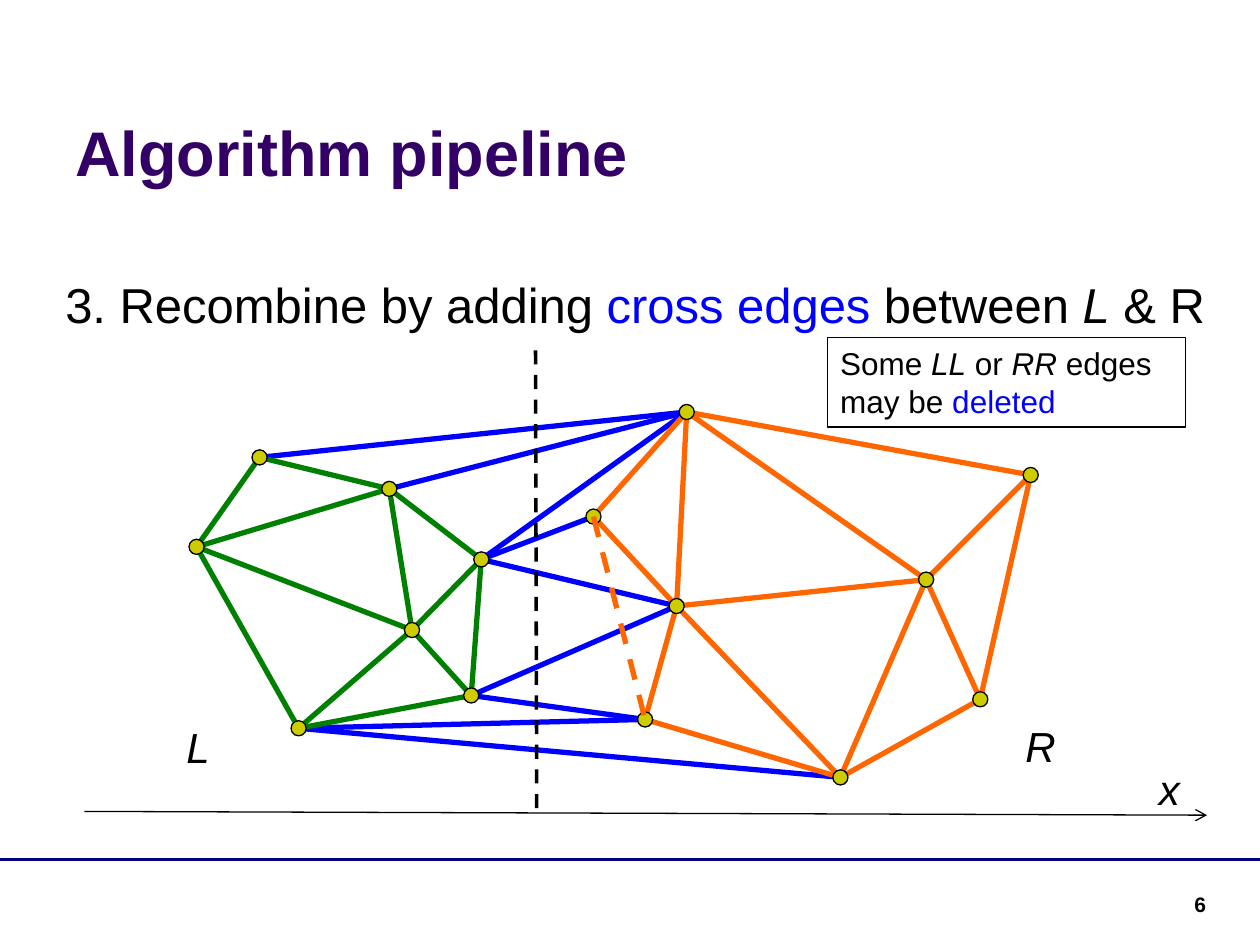
"""Builds the slide on merging two triangulations with cross edges."""
import lxml.etree
import pptx
import pptx.dml.color
import pptx.enum.dml
import pptx.enum.shapes
import pptx.enum.text
import pptx.oxml.ns
import pptx.util

Inches, Pt = pptx.util.Inches, pptx.util.Pt
RGB = pptx.dml.color.RGBColor
ALIGN = pptx.enum.text.PP_ALIGN
ANCHOR = pptx.enum.text.MSO_ANCHOR
SHAPE = pptx.enum.shapes.MSO_SHAPE
qn = pptx.oxml.ns.qn

BLACK, WHITE = RGB(0, 0, 0), RGB(255, 255, 255)
BLUE, ORANGE, GREEN = RGB(0, 0, 255), RGB(255, 102, 0), RGB(0, 128, 0)
NAVY, PURPLE, OLIVE = RGB(0, 0, 128), RGB(51, 0, 102), RGB(204, 204, 0)

DOT = 0.12
VERTICES = {
    "a": (1.56, 4.34), "b": (2.06, 3.63), "c": (3.27, 5.0), "d": (2.37, 5.78),
    "e": (3.09, 3.88), "f": (3.82, 4.44), "g": (3.74, 5.52),
    "h": (4.71, 4.1), "i": (6.67, 6.17), "j": (5.45, 3.27), "k": (7.78, 5.55),
    "l": (7.35, 4.6), "m": (5.12, 5.71), "n": (8.18, 3.77), "o": (5.37, 4.81),
}
EDGES = [
    (BLUE, "di dm ej fj fh fo bj gm go"),
    (ORANGE, "jo om jl lk nl lo oi li ho mi ki nk jn jh"),
    (GREEN, "ec ac dc gc cf ef be gf dg ab da ae"),
]
DELETED_EDGE = "hm"

STEP = [("3. Recombine by adding ", {}), ("cross edges", {"color": BLUE}),
        (" between ", {}), ("L", {"italic": True}), (" & R", {})]
NOTE = [("Some ", {}), ("LL", {"italic": True}), (" or ", {}), ("RR", {"italic": True}),
        (" edges may be ", {}), ("deleted", {"color": BLUE})]
LABELS = [("x", (9.1, 6.01, 0.5, 0.5)), ("L", (1.38, 5.68, 1.11, 0.5)),
          ("R", (8.04, 5.67, 1.11, 0.5))]


def add_text(s, box, runs, size, shape=None, color=BLACK, bold=False,
             align=ALIGN.LEFT, anchor=ANCHOR.TOP):
    sp = shape or s.shapes.add_textbox(*map(Inches, box))
    tf = sp.text_frame
    tf.word_wrap, tf.vertical_anchor = True, anchor
    p = tf.paragraphs[0]
    p.alignment = align
    for text, style in runs:
        r = p.add_run()
        r.text = text
        r.font.name, r.font.size = "Arial", Pt(size)
        r.font.bold, r.font.italic = bold, style.get("italic", False)
        r.font.color.rgb = style.get("color", color)
    return p


def add_shape(s, kind, box, fill):
    sp = s.shapes.add_shape(kind, *map(Inches, box))
    sp.shadow.inherit = False
    sp.fill.solid()
    sp.fill.fore_color.rgb = fill
    sp.line.color.rgb, sp.line.width = BLACK, Pt(0.75)
    return sp


def add_line(s, start, end, color, width, dashed=False, arrow=False):
    line = s.shapes.add_connector(pptx.enum.shapes.MSO_CONNECTOR.STRAIGHT,
                                  *map(Inches, (*start, *end)))
    line.line.color.rgb, line.line.width = color, Pt(width)
    if dashed:
        line.line.dash_style = pptx.enum.dml.MSO_LINE.DASH
    if arrow:
        lxml.etree.SubElement(line.line._get_or_add_ln(), qn("a:tailEnd"), type="arrow")
    lxml.etree.SubElement(line._element.spPr, qn("a:effectLst"))


def add_edge(s, edge, color, dashed=False):
    start, end = (VERTICES[name] for name in edge)
    add_line(s, start, end, color, 3, dashed)


def main():
    prs = pptx.Presentation()
    prs.slide_width, prs.slide_height = Inches(10), Inches(7.5)
    s = prs.slides.add_slide(prs.slide_layouts[6])

    add_line(s, (0, 6.82), (10, 6.82), NAVY, 2)
    for color, edges in EDGES:
        for edge in edges.split():
            add_edge(s, edge, color)

    add_text(s, (8.35, 7.03, 1.32, 0.28), [("6", {})], 12, bold=True, align=ALIGN.RIGHT)
    p = add_text(s, (0.3, 1.85, 9.44, 4.89), STEP, 28)
    p.line_spacing, p.space_before = 1.6, Pt(5.6)
    pPr = p._p.get_or_add_pPr()
    pPr.set("marL", str(Inches(0.4)))
    pPr.set("indent", str(Inches(-0.28)))
    add_text(s, (0.5, 0.13, 9.3, 1.42), [("Algorithm pipeline", {})], 36,
             color=PURPLE, bold=True, anchor=ANCHOR.BOTTOM)

    for x, y in VERTICES.values():
        add_shape(s, SHAPE.OVAL, (x - DOT / 2, y - DOT / 2, DOT, DOT), OLIVE)

    add_line(s, (0.67, 6.44), (9.58, 6.47), BLACK, 0.75, arrow=True)
    add_line(s, (4.25, 2.78), (4.26, 6.46), BLACK, 2, dashed=True)
    for text, box in LABELS:
        add_text(s, box, [(text, {"italic": True})], 24)

    note_box = (6.57, 2.68, 2.84, 0.71)
    add_text(s, note_box, NOTE, 18, shape=add_shape(s, SHAPE.RECTANGLE, note_box, WHITE))
    add_edge(s, DELETED_EDGE, ORANGE, dashed=True)
    prs.save("out.pptx")


if __name__ == "__main__":
    main()
